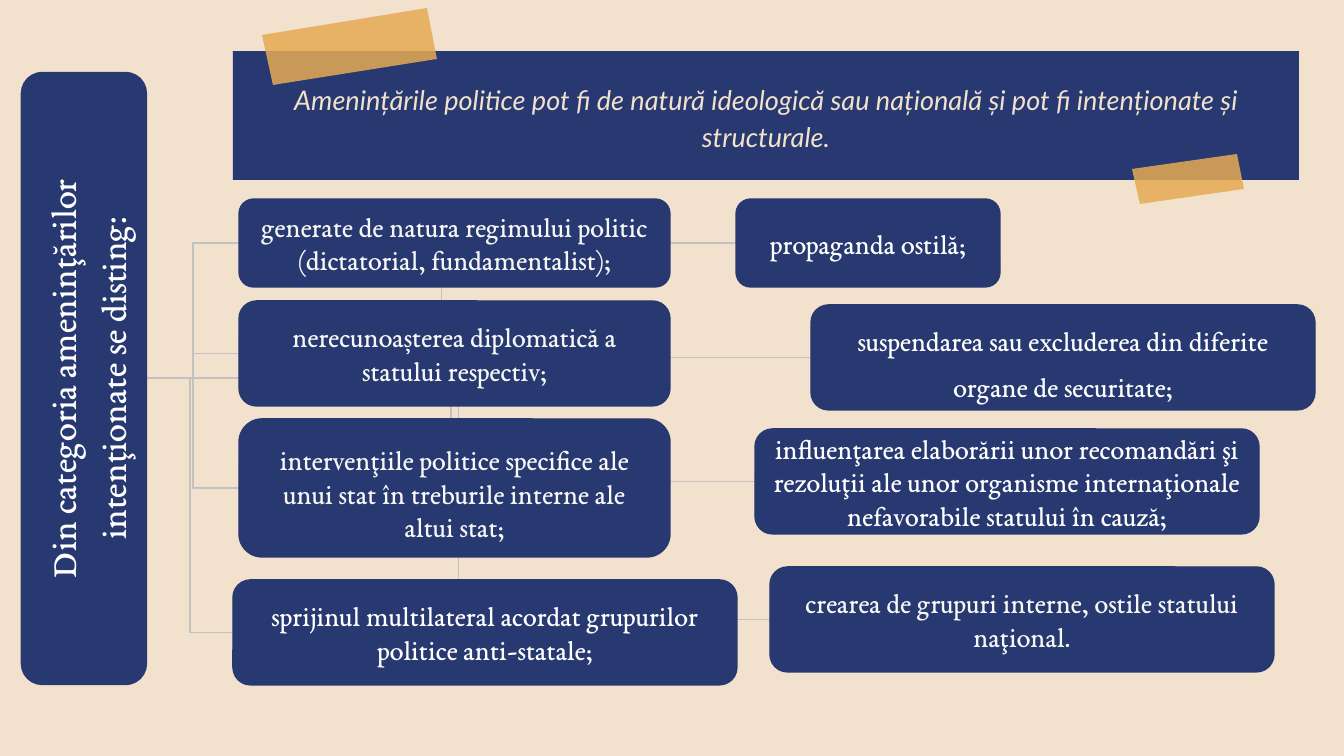
from dataclasses import dataclass

from lxml import etree
from pptx import Presentation
from pptx.dml.color import RGBColor
from pptx.enum.shapes import MSO_CONNECTOR, MSO_SHAPE
from pptx.enum.text import MSO_ANCHOR, MSO_AUTO_SIZE, PP_ALIGN
from pptx.oxml.ns import qn
from pptx.util import Emu, Pt

SCALE = 914400 / 134.4
ROUNDED = MSO_SHAPE.ROUNDED_RECTANGLE
ELBOW = MSO_CONNECTOR.ELBOW
MIDDLE = MSO_ANCHOR.MIDDLE
CENTER = PP_ALIGN.CENTER
NO_AUTOSIZE = MSO_AUTO_SIZE.NONE
INSET = 13
COLORS = {
    "sand": "F2E1CC",
    "navy": "273970",
    "tape": "E6AA54",
    "line": "C2C2C2",
    "white": "FFFFFF",
    "offwhite": "F7F7F5",
}


@dataclass(frozen=True)
class TextStyle:
    size: float
    color: str
    font: str = "EB Garamond"
    italic: bool = False
    spacing: float = 1.0
    after: int = 6


@dataclass(frozen=True)
class Box:
    x: int
    y: int
    w: int
    h: int
    text: str
    style: TextStyle
    rotation: int = 0
    top_inset: int = INSET


LIGHT = TextStyle(15, "offwhite")
LIGHT_ROW = TextStyle(15, "offwhite", after=9)
WHITE = TextStyle(15, "white")
WHITE_ROW = TextStyle(15, "white", after=9)
WHITE_OPEN = TextStyle(15, "white", spacing=1.35)

TITLE = Box(
    233, 51, 1066, 129,
    "Amenințările politice pot fi de natură ideologică sau națională "
    "și pot fi intenționate și structurale.",
    TextStyle(14.5, "sand", "Lato", True, 1.15, 0),
)
LABEL = Box(
    -222, 316, 612, 125,
    "Din categoria ameninţărilor intenţionate se disting:",
    TextStyle(19.5, "white", spacing=1.15),
    rotation=270,
)
HUB = (147, 378)
BOXES = [
    Box(239, 199, 431, 88,
        "generate de natura regimului politic (dictatorial, fundamentalist);", LIGHT_ROW),
    Box(239, 301, 431, 105,
        "nerecunoașterea diplomatică a statului respectiv;", LIGHT),
    Box(239, 419, 431, 138,
        "intervenţiile politice specifice ale unui stat în treburile interne ale altui stat;",
        LIGHT, top_inset=23),
    Box(233, 580, 504, 105,
        "sprijinul multilateral acordat grupurilor politice anti-statale;", WHITE),
    Box(736, 199, 264, 88, "propaganda ostilă;", WHITE_ROW),
    Box(811, 305, 504, 105,
        "suspendarea sau excluderea din diferite organe de securitate;", WHITE_OPEN),
    Box(755, 429, 504, 105,
        "influenţarea elaborării unor recomandări şi rezoluţii ale unor organisme "
        "internaţionale nefavorabile statului în cauză;", WHITE),
    Box(770, 567, 504, 105,
        "crearea de grupuri interne, ostile statului naţional.", LIGHT),
]
TAPES = [
    [(262, 35), (273, 85), (437, 59), (427, 8)],
    [(1132, 169), (1140, 204), (1244, 189), (1237, 154)],
]


def px(n: float) -> Emu:
    return Emu(round(n * SCALE))


def rgb(name: str) -> RGBColor:
    return RGBColor.from_string(COLORS[name])


def fill(sp, color: str) -> None:
    sp.fill.solid()
    sp.fill.fore_color.rgb = rgb(color)


def write(sp, box: Box) -> None:
    style = box.style
    tf = sp.text_frame
    tf.word_wrap = True
    tf.auto_size = NO_AUTOSIZE
    tf.vertical_anchor = MIDDLE
    tf.margin_left = tf.margin_right = tf.margin_bottom = px(INSET)
    tf.margin_top = px(box.top_inset)
    p = tf.paragraphs[0]
    p.alignment = CENTER
    p.line_spacing = style.spacing
    p.space_before = Pt(0)
    p.space_after = Pt(style.after)
    r = p.add_run()
    r.text = box.text
    r.font.name = style.font
    r.font.size = Pt(style.size)
    r.font.italic = style.italic
    r.font.bold = False
    r.font.color.rgb = rgb(style.color)


def draw_title(s, box: Box) -> None:
    sp = s.shapes.title
    sp.left, sp.top, sp.width, sp.height = map(px, (box.x, box.y, box.w, box.h))
    fill(sp, "navy")
    write(sp, box)


def draw_connector(s, box: Box) -> None:
    end = (box.x, box.y + box.h / 2)
    cxn = s.shapes.add_connector(ELBOW, *map(px, HUB + end))
    cxn.line.color.rgb = rgb("line")
    cxn.line.width = Pt(0.75)
    etree.SubElement(cxn._element.spPr, qn("a:effectLst"))


def draw_box(s, box: Box) -> None:
    sp = s.shapes.add_shape(ROUNDED, *map(px, (box.x, box.y, box.w, box.h)))
    sp.shadow.inherit = False
    sp.rotation = box.rotation
    fill(sp, "navy")
    sp.line.color.rgb = rgb("navy")
    sp.line.width = Pt(0.75)
    write(sp, box)


def draw_tape(s, points: list[tuple[int, int]]) -> None:
    builder = s.shapes.build_freeform(*points[0], scale=SCALE)
    builder.add_line_segments(points[1:], close=True)
    sp = builder.convert_to_shape()
    sp.shadow.inherit = False
    fill(sp, "tape")
    sp.line.fill.background()
    color = sp._element.spPr.find(qn("a:solidFill"))[0]
    etree.SubElement(color, qn("a:alpha"), val="85000")


def main() -> None:
    prs = Presentation()
    prs.slide_width, prs.slide_height = px(1344), px(756)
    s = prs.slides.add_slide(prs.slide_layouts[5])
    fill(s.background, "sand")
    draw_title(s, TITLE)
    for points in TAPES:
        draw_tape(s, points)
    for box in BOXES:
        draw_connector(s, box)
    for box in [LABEL, *BOXES]:
        draw_box(s, box)
    prs.save("out.pptx")


if __name__ == "__main__":
    main()
